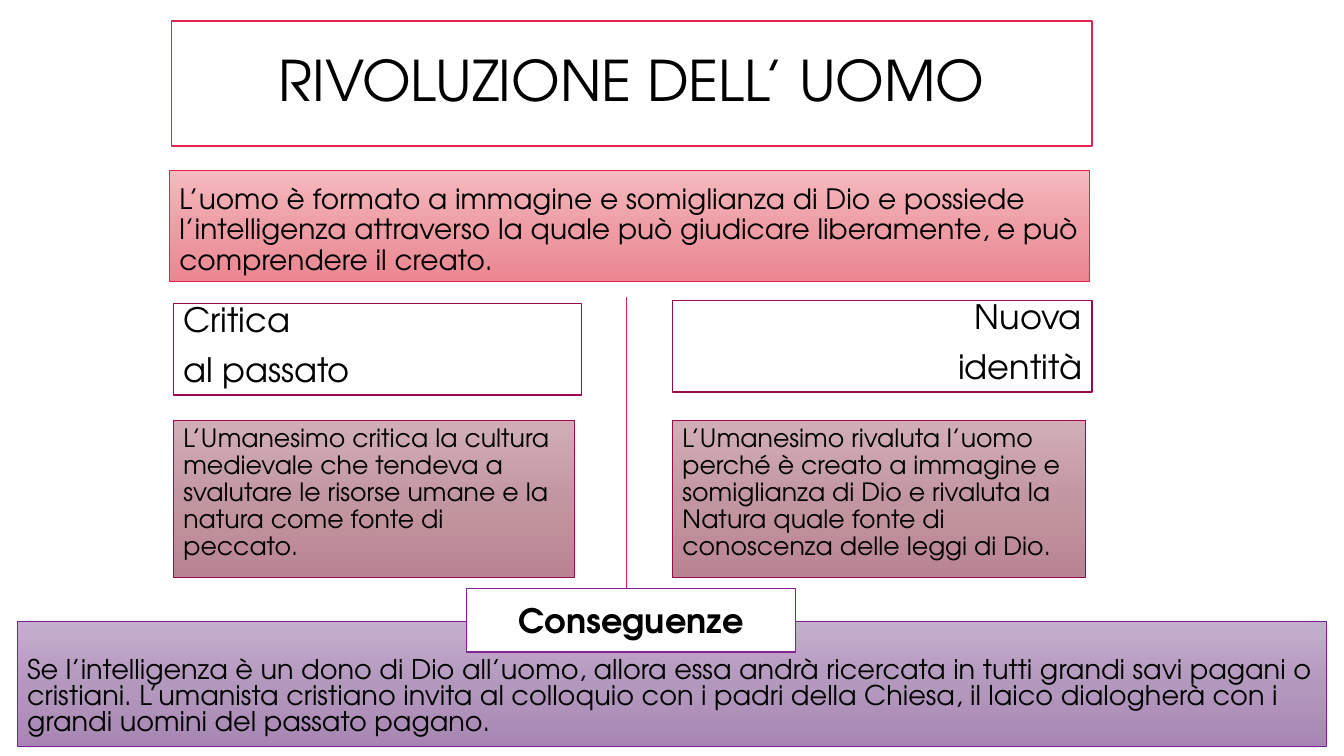
from lxml.etree import SubElement
from pptx import Presentation
from pptx.dml.color import RGBColor
from pptx.enum.shapes import MSO_CONNECTOR, MSO_SHAPE
from pptx.enum.text import MSO_ANCHOR as Anchor, PP_ALIGN as Align
from pptx.oxml.ns import qn
from pptx.util import Inches, Pt

FONT = "TeX Gyre Adventor"
BLACK = RGBColor(0x00, 0x00, 0x00)
WHITE = RGBColor(0xFF, 0xFF, 0xFF)
RED = RGBColor(0xE5, 0x22, 0x4E)
WINE = RGBColor(0x9D, 0x07, 0x4E)
VIOLET = RGBColor(0x7F, 0x22, 0x94)

STOPS = (0, 52, 100)
PINK_FADE = [RGBColor.from_string(c) for c in ("F6BABF", "EE9DA5", "EB8691")]
WINE_FADE = [RGBColor.from_string(c) for c in ("D1AEB6", "C296A0", "B98491")]
VIOLET_FADE = [RGBColor.from_string(c) for c in ("C4AECD", "B398BD", "A786B3")]

TITLE = "RIVOLUZIONE DELL’ UOMO"
PREMISE = ("L’uomo è formato a immagine e somiglianza di Dio e possiede l’intelligenza "
           "attraverso la quale può giudicare liberamente, e può comprendere il creato.")
# heading lines, alignment, left, heading top, heading width, body width, body
COLUMNS = [
    (["Critica", "al passato"], Align.JUSTIFY, 1.72, 3.01, 4.05, 3.98,
     "L’Umanesimo critica la cultura medievale che tendeva a svalutare le risorse "
     "umane e la natura come fonte di peccato."),
    (["Nuova", "identità"], Align.RIGHT, 6.67, 2.98, 4.16, 4.1,
     "L’Umanesimo rivaluta l’uomo perché è creato a immagine e somiglianza di Dio e "
     "rivaluta la Natura quale fonte di conoscenza delle leggi di Dio."),
]
CONSEQUENCE_LABEL = "Conseguenze"
CONSEQUENCE = ("Se l’intelligenza è un dono di Dio all’uomo, allora essa andrà ricercata in "
               "tutti grandi savi pagani o cristiani. L’umanista cristiano invita al colloquio "
               "con i padri della Chiesa, il laico dialogherà con i grandi uomini del passato "
               "pagano.")

WIDTH, HEIGHT = 13.33, 7.5
BANNER_WIDTH = 9.13
HEADING_HEIGHT = 0.91
BODY_TOP, BODY_HEIGHT = 4.17, 1.56
DIVIDER_X, DIVIDER_TOP, LABEL_TOP = 6.21, 2.95, 5.84


def fill_with_fade(shape, colors):
    """Fill the shape with a three-stop gradient from top to bottom."""
    shape.fill.gradient()
    shape.fill.gradient_angle = 270
    stop_list = shape._element.spPr.find(".//" + qn("a:gsLst"))
    for stop in list(stop_list):
        stop_list.remove(stop)
    for position, color in zip(STOPS, colors):
        stop = SubElement(stop_list, qn("a:gs"), pos=str(position * 1000))
        SubElement(stop, qn("a:srgbClr"), val=str(color))


def add_box(slide, area, lines, size, border, fade=None, align=Align.LEFT,
            anchor=Anchor.TOP, spacing=0.9, bold=False, inset_top=0.05):
    """Add a framed rectangle; it is white with a heavier frame when no fade is given."""
    shape = slide.shapes.add_shape(MSO_SHAPE.RECTANGLE, *map(Inches, area))
    shape.shadow.inherit = False
    if fade:
        fill_with_fade(shape, fade)
    else:
        shape.fill.solid()
        shape.fill.fore_color.rgb = WHITE
    shape.line.color.rgb = border
    shape.line.width = Pt(0.75 if fade else 1)

    frame = shape.text_frame
    frame.word_wrap = True
    frame.vertical_anchor = anchor
    frame.margin_top = Inches(inset_top)
    for index, line in enumerate(lines):
        paragraph = frame.add_paragraph() if index else frame.paragraphs[0]
        paragraph.alignment = align
        paragraph.line_spacing = spacing
        paragraph.space_before = Pt(10 if index else 0)
        run = paragraph.add_run()
        run.text = line
        run.font.name = FONT
        run.font.size = Pt(size)
        run.font.bold = bold
        run.font.color.rgb = BLACK


def add_divider(slide):
    divider = slide.shapes.add_connector(
        MSO_CONNECTOR.STRAIGHT, Inches(DIVIDER_X), Inches(DIVIDER_TOP),
        Inches(DIVIDER_X), Inches(LABEL_TOP))
    divider.line.color.rgb = RED
    divider.line.width = Pt(0.75)
    SubElement(divider._element.spPr, qn("a:effectLst"))


def main():
    presentation = Presentation()
    presentation.slide_width = Inches(WIDTH)
    presentation.slide_height = Inches(HEIGHT)
    slide = presentation.slides.add_slide(presentation.slide_layouts[6])

    add_box(slide, (1.7, 0.21, BANNER_WIDTH, 1.24), [TITLE], 40, RED,
            align=Align.CENTER, anchor=Anchor.MIDDLE)
    add_box(slide, (1.68, 1.69, BANNER_WIDTH, 1.1), [PREMISE], 20, RED, PINK_FADE,
            anchor=Anchor.BOTTOM)
    for heading, align, left, top, heading_width, body_width, body in COLUMNS:
        add_box(slide, (left, top, heading_width, HEADING_HEIGHT), heading, 24, WINE,
                align=align, anchor=Anchor.BOTTOM)
        add_box(slide, (left, BODY_TOP, body_width, BODY_HEIGHT), [body], 18, WINE, WINE_FADE)

    add_box(slide, (0.17, 6.17, 12.99, 1.24), [CONSEQUENCE], 19.4, VIOLET, VIOLET_FADE,
            spacing=0.8, inset_top=0.36)
    add_divider(slide)
    add_box(slide, (4.63, LABEL_TOP, 3.26, 0.63), [CONSEQUENCE_LABEL], 24, VIOLET,
            align=Align.CENTER, anchor=Anchor.MIDDLE, spacing=1.0, bold=True)

    presentation.save("out.pptx")


if __name__ == "__main__":
    main()
